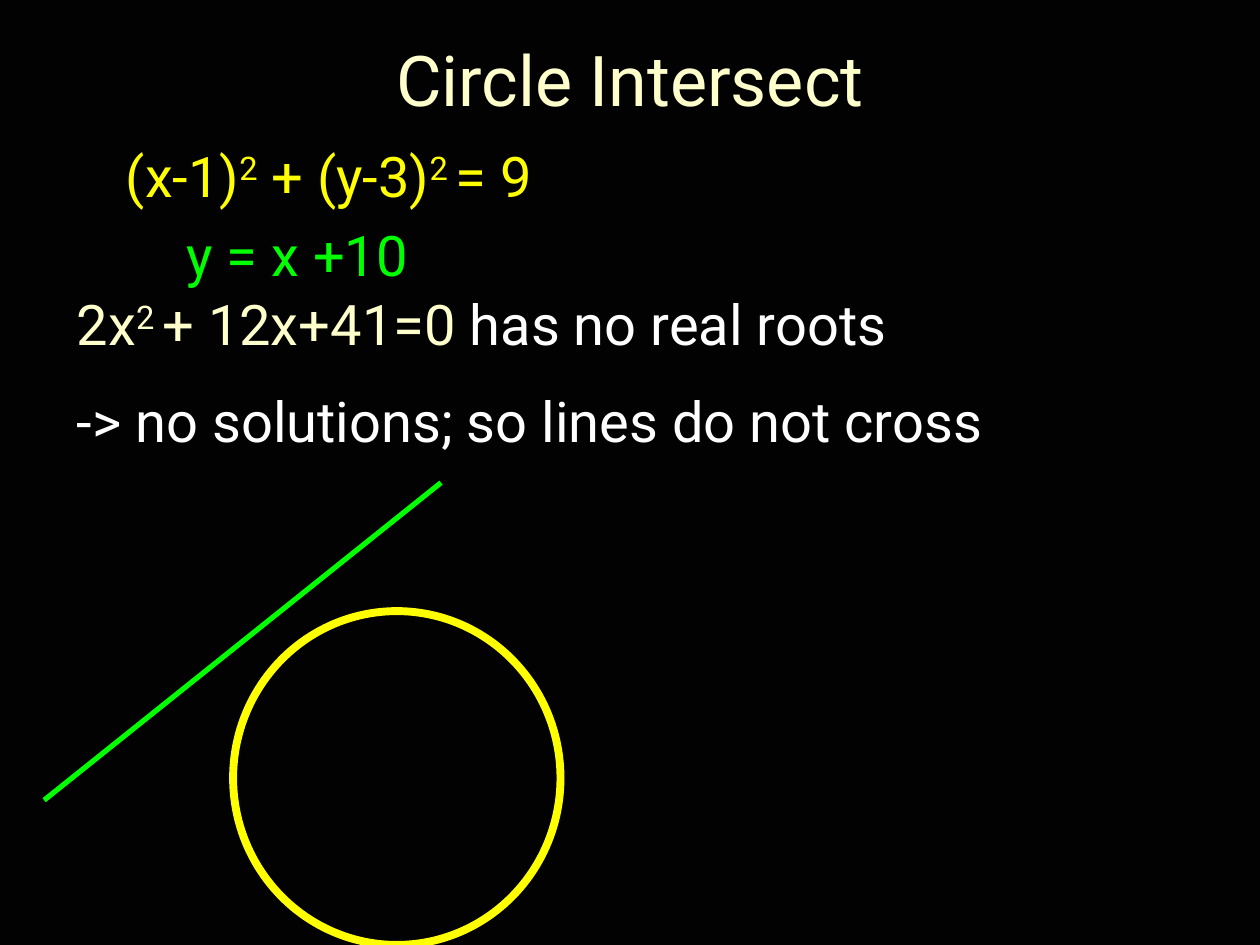
from lxml import etree
from pptx import Presentation
from pptx.dml.color import RGBColor
from pptx.enum.shapes import MSO_CONNECTOR, MSO_SHAPE
from pptx.enum.text import MSO_ANCHOR, PP_ALIGN
from pptx.oxml.ns import qn
from pptx.util import Cm, Pt

OVAL, STRAIGHT = MSO_SHAPE.OVAL, MSO_CONNECTOR.STRAIGHT
LEFT, CENTER = PP_ALIGN.LEFT, PP_ALIGN.CENTER
TOP, MIDDLE = MSO_ANCHOR.TOP, MSO_ANCHOR.MIDDLE

THEME = {
    "font": "Roboto",
    "title": 40, "body": 32, "gap": 17,
    "back": "020202", "cream": "FFFFCC", "white": "FFFFFF",
    "circle": "FFFF00", "line": "00FF00",
}

# A run is (text, colour, raised); a paragraph is a list of runs.
TITLE = [[("Circle Intersect", "cream", False)]]
CIRCLE_EQUATION = [[
    ("(x-1)", "circle", False), ("2", "circle", True),
    (" + (y-3)", "circle", False), ("2 ", "circle", True),
    ("= 9", "circle", False),
]]
LINE_EQUATION = [[("y = x +10", "line", False)]]
CONCLUSION = [
    [("2x", "cream", False), ("2 ", "cream", True),
     ("+ 12x+41=0", "cream", False), (" has no real roots", "white", False)],
    [("-> no solutions; so lines do not cross", "white", False)],
]

# Left, top, width, height in cm
TITLE_BOX = (0.84, 0.64, 23.72, 1.88)
CONCLUSION_BOX = (1.3, 5.72, 20.8, 3.63)
LINE_EQUATION_BOX = (3.51, 4.32, 5.56, 1.6)
CIRCLE_EQUATION_BOX = (2.29, 2.72, 9.91, 1.6)
CIRCLE_BOX = (4.7, 12.32, 6.6, 6.73)
LINE_ENDS = (0.89, 16.13, 8.89, 9.73)


def cm(values):
    return [Cm(v) for v in values]


def color(name):
    return RGBColor.from_string(THEME[name])


def add_text(s, paragraphs, box, size="body", align=LEFT, anchor=TOP, wrap=True):
    tf = s.shapes.add_textbox(*cm(box)).text_frame
    tf.word_wrap = wrap
    tf.vertical_anchor = anchor
    for i, runs in enumerate(paragraphs):
        p = tf.add_paragraph() if i else tf.paragraphs[0]
        p.alignment = align
        p.space_before = Pt(THEME["gap"] if i else 0)
        for text, name, raised in runs:
            r = p.add_run()
            r.text = text
            r.font.name = THEME["font"]
            r.font.size = Pt(THEME[size])
            r.font.color.rgb = color(name)
            if raised:
                r._r.get_or_add_rPr().set("baseline", "30000")


def add_diagram(s):
    """Draw the circle and the line that misses it as one group."""
    group = s.shapes.add_group_shape()
    circle = group.shapes.add_shape(OVAL, *cm(CIRCLE_BOX))
    circle.shadow.inherit = False
    circle.fill.background()
    line = group.shapes.add_connector(STRAIGHT, *cm(LINE_ENDS))
    etree.SubElement(line._element.spPr, qn("a:effectLst"))
    for sp, name, width in ((circle, "circle", 4.5), (line, "line", 3)):
        sp.line.color.rgb = color(name)
        sp.line.width = Pt(width)


def main():
    prs = Presentation()
    prs.slide_width, prs.slide_height = Cm(25.4), Cm(19.05)
    s = prs.slides.add_slide(prs.slide_layouts[6])
    s.background.fill.solid()
    s.background.fill.fore_color.rgb = color("back")
    add_text(s, TITLE, TITLE_BOX, size="title", align=CENTER, anchor=MIDDLE)
    add_text(s, CONCLUSION, CONCLUSION_BOX)
    add_text(s, LINE_EQUATION, LINE_EQUATION_BOX, wrap=False)
    add_text(s, CIRCLE_EQUATION, CIRCLE_EQUATION_BOX, wrap=False)
    add_diagram(s)
    prs.save("out.pptx")


if __name__ == "__main__":
    main()
